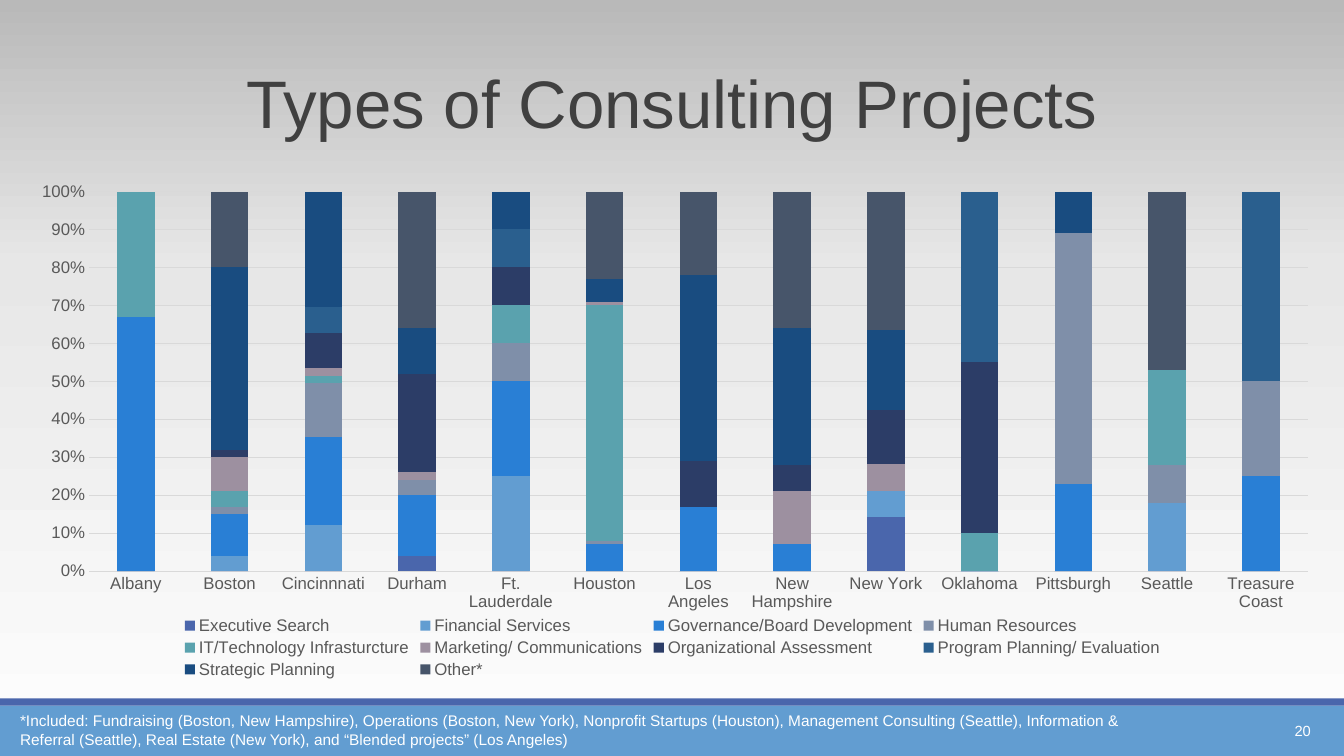
from copy import deepcopy
from dataclasses import dataclass

from lxml.etree import SubElement
from pptx import Presentation
from pptx.chart.data import CategoryChartData as ChartData
from pptx.dml.color import RGBColor as RGB
from pptx.enum.chart import XL_CHART_TYPE as ChartType
from pptx.enum.chart import XL_LEGEND_POSITION as LegendPosition
from pptx.enum.chart import XL_TICK_MARK as TickMark
from pptx.enum.shapes import MSO_CONNECTOR as Connector
from pptx.enum.shapes import MSO_SHAPE as Shape
from pptx.enum.text import MSO_ANCHOR as Anchor
from pptx.enum.text import MSO_AUTO_SIZE as AutoSize
from pptx.enum.text import PP_ALIGN as Align
from pptx.oxml.ns import qn
from pptx.util import Pt

PX = 9144


@dataclass(frozen=True)
class Theme:
    font: str = "Arial"
    backdrop: tuple = ((0, "FEFEFE"), (0.65, "E7E7E7"), (1, "B9B9B9"))
    band: str = "629DD1"
    stripe: str = "4A66AC"
    rule: str = "808080"
    title: str = "404040"
    label: str = "595959"
    grid: str = "D9D9D9"
    light: str = "FFFFFF"
    title_size: float = 48
    label_size: float = 12
    note_size: float = 11
    number_size: float = 10.5


PROJECTS = (
    ("Executive Search", "4A66AC", (0, 0, 0, 4, 0, 0, 0, 0, 14, 0, 0, 0, 0)),
    ("Financial Services", "629DD1", (0, 4, 12, 0, 25, 0, 0, 0, 7, 0, 0, 18, 0)),
    ("Governance/Board Development", "297FD5",
     (67, 11, 23, 16, 25, 7, 17, 7, 0, 0, 23, None, 25)),
    ("Human Resources", "7F8FA9", (0, 2, 14, 4, 10, 1, 0, 0, 0, 0, 66, 10, 25)),
    ("IT/Technology Infrasturcture", "5AA2AE",
     (33, 4, 2, 0, 10, 62, 0, 0, 0, 10, 0, 25, 0)),
    ("Marketing/ Communications", "9D90A0",
     (0, 9, 2, 2, 0, 1, 0, 14, 7, 0, 0, 0, 0)),
    ("Organizational Assessment", "2C3D67",
     (0, 2, 9, 26, 10, 0, 12, 7, 14, 45, 0, 0, 0)),
    ("Program Planning/ Evaluation", "2A5F8E",
     (0, 0, 7, 0, 10, 0, 0, 0, 0, 45, 0, 0, 50)),
    ("Strategic Planning", "194C80",
     (0, 48, 30, 12, 10, 6, 49, 36, 21, 0, 11, 0, 0)),
    ("Other*", "47556A", (0, 20, 0, 36, 0, 23, 22, 36, 36, 0, 0, 47, 0)),
)
CITIES = ("Albany", "Boston", "Cincinnnati", "Durham", "Ft. Lauderdale", "Houston",
          "Los Angeles", "New Hampshire", "New York", "Oklahoma", "Pittsburgh",
          "Seattle", "Treasure Coast")
FOOTNOTE = (
    "*Included: Fundraising (Boston, New Hampshire), Operations (Boston, New York), "
    "Nonprofit Startups (Houston), Management Consulting (Seattle), Information & "
    "Referral (Seattle), Real Estate (New York), and “Blended projects” (Los Angeles)"
)


def emu(*lengths):
    return [length * PX for length in lengths]


def assign(target, values):
    for name, value in values.items():
        setattr(target, name, value)


class SlideBuilder:
    def __init__(self, slide, theme):
        self.slide = slide
        self.theme = theme

    def style_font(self, font, size, color):
        assign(font, {"name": self.theme.font, "size": Pt(size)})
        font.color.rgb = RGB.from_string(color)

    def style_line(self, line, color, width):
        line.color.rgb = RGB.from_string(color)
        line.width = Pt(width)

    def backdrop(self):
        fill = self.slide.background.fill
        fill.gradient()
        fill.gradient_angle = 90
        first = self.slide.element.find(".//" + qn("a:gs"))
        first.addnext(deepcopy(first))
        for stop, (position, color) in zip(fill.gradient_stops, self.theme.backdrop):
            stop.position = position
            stop.color.rgb = RGB.from_string(color)

    def bar(self, box, color):
        bar = self.slide.shapes.add_shape(Shape.RECTANGLE, *emu(*box))
        bar.shadow.inherit = False
        bar.fill.solid()
        bar.fill.fore_color.rgb = RGB.from_string(color)
        bar.line.fill.background()

    def rule(self, ends, color, width):
        rule = self.slide.shapes.add_connector(Connector.STRAIGHT, *emu(*ends))
        self.style_line(rule.line, color, width)
        SubElement(rule.element.spPr, qn("a:effectLst"))

    def text(self, box, words, size, color, align=Align.LEFT, **frame_format):
        frame = self.slide.shapes.add_textbox(*emu(*box)).text_frame
        assign(frame, {"word_wrap": True, **frame_format})
        paragraph = frame.paragraphs[0]
        paragraph.alignment = align
        run = paragraph.add_run()
        run.text = words
        self.style_font(run.font, size, color)

    def stacked_chart(self, box, categories, series, plot_area):
        theme = self.theme
        data = ChartData()
        data.categories = categories
        for name, _, values in series:
            data.add_series(name, values)
        chart = self.slide.shapes.add_chart(
            ChartType.COLUMN_STACKED_100, *emu(*box), data).chart
        assign(chart, {"has_title": False, "has_legend": True})
        self.style_font(chart.font, theme.label_size, theme.label)
        assign(chart.legend,
               {"position": LegendPosition.BOTTOM, "include_in_layout": False})
        self.style_font(chart.legend.font, theme.label_size, theme.label)

        plot = chart.plots[0]
        assign(plot, {"gap_width": 150, "overlap": 100, "vary_by_categories": False})
        for columns, (_, color, _) in zip(plot.series, series):
            columns.format.fill.solid()
            columns.format.fill.fore_color.rgb = RGB.from_string(color)

        cities, shares = chart.category_axis, chart.value_axis
        for axis in (cities, shares):
            assign(axis, {"major_tick_mark": TickMark.NONE,
                          "minor_tick_mark": TickMark.NONE})
            self.style_font(axis.tick_labels.font, theme.label_size, theme.label)
        self.style_line(cities.format.line, theme.grid, 0.75)
        shares.format.line.fill.background()
        self.style_line(shares.major_gridlines.format.line, theme.grid, 0.75)
        assign(shares.tick_labels,
               {"number_format": "0%", "number_format_is_linked": False})
        self.place_plot(chart, plot_area)

    def place_plot(self, chart, plot_area):
        area = chart.element.find(".//" + qn("c:plotArea"))
        for stale in area.findall(qn("c:layout")):
            area.remove(stale)
        layout = SubElement(area, qn("c:layout"))
        area.insert(0, layout)
        manual = SubElement(layout, qn("c:manualLayout"))
        settings = {"layoutTarget": "inner", "xMode": "edge", "yMode": "edge",
                    **dict(zip("xywh", plot_area))}
        for tag, value in settings.items():
            SubElement(manual, qn(f"c:{tag}")).set("val", str(value))


def main():
    theme = Theme()
    deck = Presentation()
    assign(deck, {"slide_width": 1333 * PX, "slide_height": 750 * PX})
    page = SlideBuilder(deck.slides.add_slide(deck.slide_layouts[6]), theme)
    page.backdrop()
    page.bar((0, 700, 1333, 50), theme.band)
    page.bar((0, 693, 1333, 7), theme.stripe)
    page.rule((131, 190, 1221, 190), theme.rule, 0.5)
    page.text((1167, 705, 143, 40), "20", theme.number_size, theme.light,
              Align.RIGHT, vertical_anchor=Anchor.MIDDLE)
    page.text((0, 56, 1333, 91), "Types of Consulting Projects", theme.title_size,
              theme.title, Align.CENTER, auto_size=AutoSize.SHAPE_TO_FIT_TEXT)
    page.stacked_chart((24, 175, 1286, 502), CITIES, PROJECTS,
                       (0.05, 0.03, 0.94, 0.75))
    page.text((10, 701, 1148, 47), FOOTNOTE, theme.note_size, theme.light,
              auto_size=AutoSize.SHAPE_TO_FIT_TEXT)
    deck.save("out.pptx")


if __name__ == "__main__":
    main()
